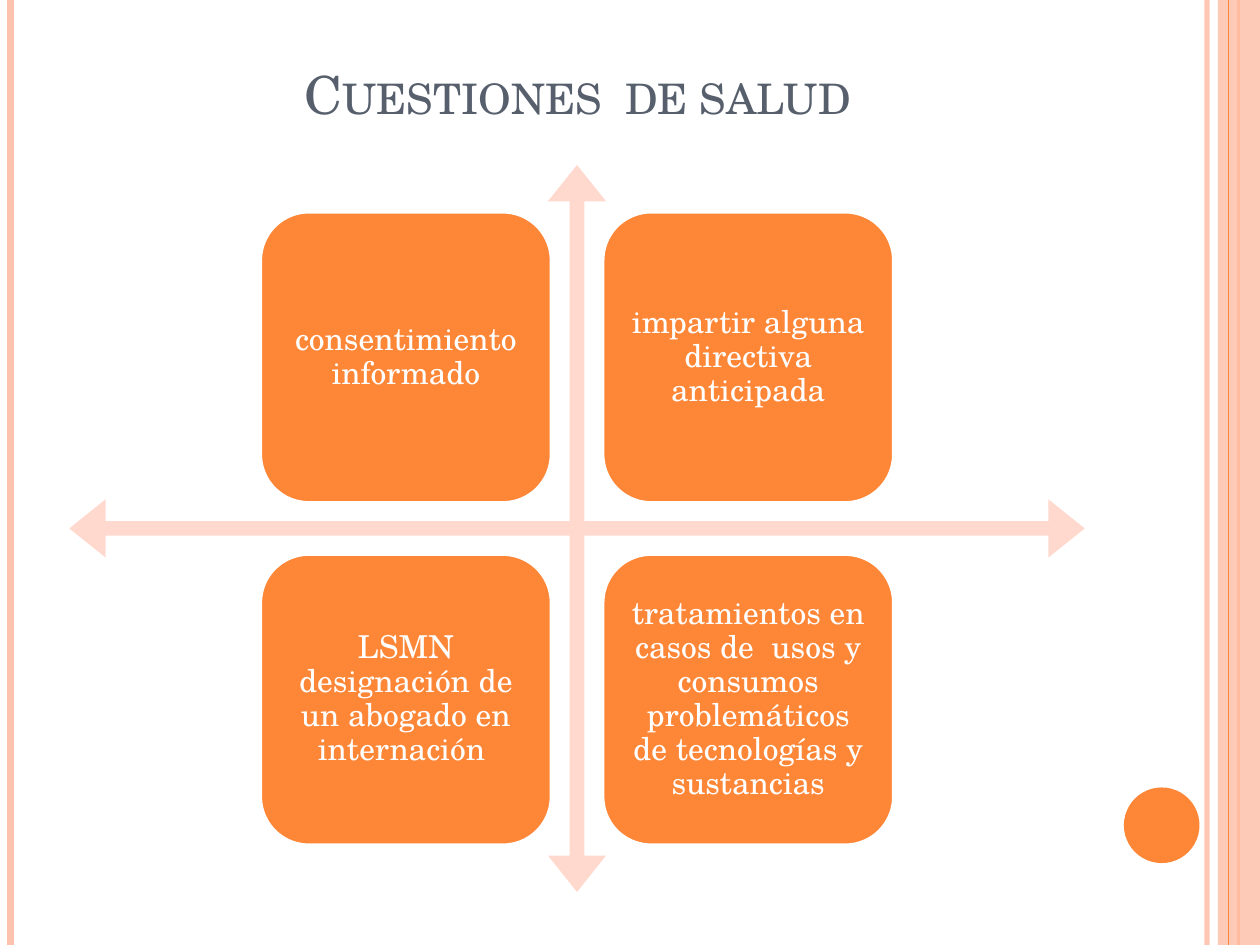
from dataclasses import dataclass
from itertools import product

from lxml.etree import SubElement
from pptx import Presentation
from pptx.dml.color import RGBColor as RGB
from pptx.enum.shapes import MSO_CONNECTOR as Link, MSO_SHAPE as Kind
from pptx.enum.text import MSO_ANCHOR as Anchor, PP_ALIGN as Align
from pptx.oxml.ns import qn
from pptx.util import Pt

WIDE, HIGH = 720, 540


@dataclass(frozen=True)
class Theme:
    font: str = "TeX Gyre Schola"
    main: str = "FE8637"
    pale: str = "FEC3AE"
    cross: str = "FFD9CE"
    ink: str = "575F6D"
    white: str = "FFFFFF"
    head: int = 30
    body: int = 18


def apply(obj, form):
    for name, value in form.items():
        setattr(obj, name, value)


def fade(fill, alpha):
    """Make a solid fill, of a shape or line, partly clear (alpha in percent)."""
    tone = fill.find(".//" + qn("a:srgbClr"))
    SubElement(tone, qn("a:alpha"), val=str(alpha * 1000))


class Deck:
    """Holds the theme and the current slide; lengths are in points."""

    def __init__(self, theme):
        self.theme = theme
        self.file = Presentation()
        apply(self.file, {"slide_width": Pt(WIDE), "slide_height": Pt(HIGH)})
        self.slide = self.file.slides.add_slide(self.file.slide_layouts[5])

    def label(self, shape, text, size, color, frame):
        box = shape.text_frame
        apply(box, {"word_wrap": True, **frame})
        par = box.paragraphs[0]
        par.alignment = Align.CENTER
        run = par.add_run()
        run.text = text
        apply(run.font, {"name": self.theme.font, "size": Pt(size)})
        run.font.color.rgb = RGB.from_string(color)
        return par, run

    def title(self, text, left, top, width, height):
        shape = self.slide.shapes.title
        apply(shape, {"left": Pt(left), "top": Pt(top),
                      "width": Pt(width), "height": Pt(height)})
        frame = {"vertical_anchor": Anchor.BOTTOM, "margin_bottom": Pt(40)}
        run = self.label(shape, text, self.theme.head, self.theme.ink, frame)[1]
        run.font._element.set("cap", "small")

    def rail(self, x, color, width, alpha=100):
        """Draw a line down the full height of the slide."""
        line = self.slide.shapes.add_connector(
            Link.STRAIGHT, Pt(x), Pt(0), Pt(x), Pt(HIGH))
        line.line.color.rgb = RGB.from_string(color)
        line.line.width = Pt(width)
        if alpha < 100:
            fade(line._element.spPr, alpha)
        SubElement(line._element.spPr, qn("a:effectLst"))

    def shape(self, kind, left, top, width, height, color, adj=()):
        form = self.slide.shapes.add_shape(
            kind, Pt(left), Pt(top), Pt(width), Pt(height))
        form.shadow.inherit = False
        form.fill.solid()
        form.fill.fore_color.rgb = RGB.from_string(color)
        form.line.fill.background()
        for i, value in enumerate(adj):
            form.adjustments[i] = value
        return form

    def card(self, text, left, top, side):
        card = self.shape(Kind.ROUNDED_RECTANGLE, left, top, side, side,
                          self.theme.main)
        card.line.color.rgb = RGB.from_string(self.theme.white)
        card.line.width = Pt(2)
        edges = ("left", "top", "right", "bottom")
        frame = {f"margin_{edge}": Pt(5) for edge in edges}
        frame["vertical_anchor"] = Anchor.MIDDLE
        par = self.label(card, text, self.theme.body, self.theme.white, frame)[0]
        par.line_spacing = 0.9


def border(deck):
    look = deck.theme
    deck.rail(689.76, look.pale, 3, 93)
    deck.rail(6, look.pale, 4.5)
    deck.rail(707.76, look.main, 1.5)
    band = deck.shape(Kind.RECTANGLE, 696, 0, 24, HIGH, look.pale)
    fade(band._element.spPr, 87)
    deck.rail(702, look.main, 0.75)
    deck.shape(Kind.OVAL, 642.24, 450, 43.2, 43.2, look.main)


def matrix(deck, texts):
    left, top, width, height = 39.6, 94.3, 580.3, 415.4
    side, gap = 166.3, 29.3
    deck.shape(Kind.QUAD_ARROW, left, top, width, height,
               deck.theme.cross, (0.02, 0.04, 0.05))
    x = left + width / 2 - gap / 2 - side
    y = top + height / 2 - gap / 2 - side
    step = side + gap
    for text, (row, col) in zip(texts, product(range(2), repeat=2)):
        deck.card(text, x + col * step, y + row * step, side)


def main():
    deck = Deck(Theme())
    border(deck)
    deck.title("Cuestiones  de salud", 36, 21.6, 588, 90)
    matrix(deck, (
        "consentimiento informado",
        "impartir alguna directiva anticipada",
        "LSMN designación de un abogado en internación ",
        "tratamientos en casos de  usos y consumos problemáticos "
        "de tecnologías y sustancias",
    ))
    deck.file.save("out.pptx")


if __name__ == "__main__":
    main()
